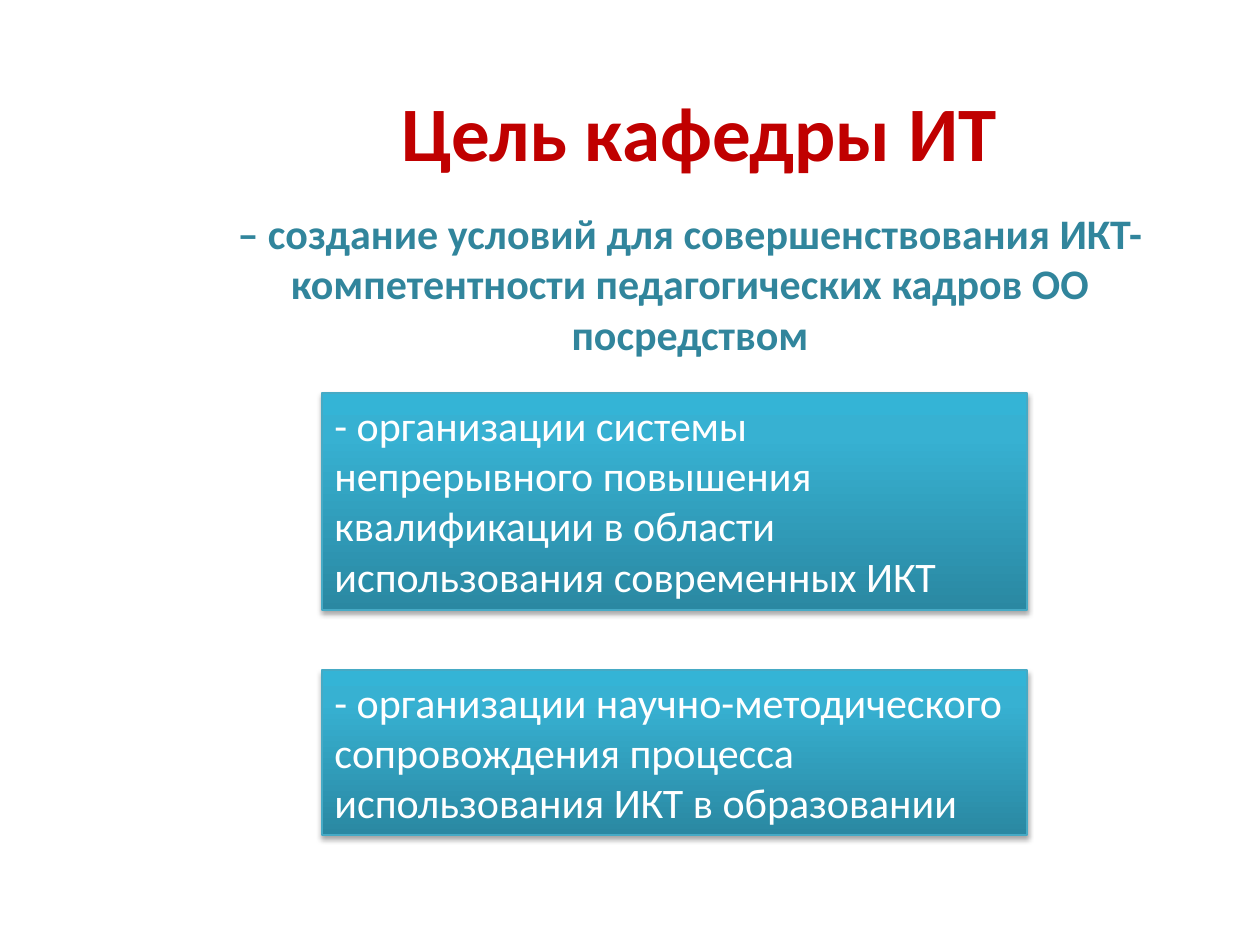
from copy import deepcopy

from lxml import etree
from pptx import Presentation
from pptx import util as u
from pptx.dml import color as colors
from pptx.enum import shapes, text
from pptx.oxml import ns

FONT = "Calibri"
CARD_GRADIENT = [(0, "2A88A2"), (0.8, "37B1D2"), (1, "34B4D6")]


def px(value):
    return u.Emu(round(value * 914400 / 126))


def rgb(value):
    return colors.RGBColor.from_string(value)


def write(frame, wording, size, color, bold, align):
    frame.word_wrap = True
    frame.text = wording
    paragraph = frame.paragraphs[0]
    paragraph.alignment = align
    font = paragraph.font
    font.name = FONT
    font.size = u.Pt(size)
    font.bold = bold
    font.color.rgb = rgb(color)


def fill_gradient(shape):
    shape.fill.gradient()
    shape.fill.gradient_angle = 90
    stop_list = shape._element.spPr.find(".//" + ns.qn("a:gsLst"))
    stop_list.append(deepcopy(stop_list[-1]))
    for stop, (position, color) in zip(shape.fill.gradient_stops, CARD_GRADIENT):
        stop.position = position
        stop.color.rgb = rgb(color)


def add_shadow(shape):
    shape.shadow.inherit = False
    effects = shape._element.spPr.find(ns.qn("a:effectLst"))
    shadow = etree.SubElement(
        effects, ns.qn("a:outerShdw"), blurRad="40000", dist="23000",
        dir="5400000", rotWithShape="0",
    )
    color = etree.SubElement(shadow, ns.qn("a:srgbClr"), val="000000")
    etree.SubElement(color, ns.qn("a:alpha"), val="35000")


def add_heading(slide, left, top, width, height, wording):
    box = slide.shapes.add_textbox(px(left), px(top), px(width), px(height))
    write(box.text_frame, wording, 44, "C00000", True, text.PP_ALIGN.LEFT)
    box.text_frame.auto_size = text.MSO_AUTO_SIZE.SHAPE_TO_FIT_TEXT


def place_title(slide, left, top, width, height, wording):
    title = slide.shapes.title
    title.left, title.top = px(left), px(top)
    title.width, title.height = px(width), px(height)
    frame = title.text_frame
    frame.auto_size = text.MSO_AUTO_SIZE.NONE
    frame.vertical_anchor = text.MSO_ANCHOR.MIDDLE
    write(frame, wording, 24, "31859C", True, text.PP_ALIGN.CENTER)


def add_card(slide, left, top, width, height, wording):
    card = slide.shapes.add_shape(
        shapes.MSO_SHAPE.RECTANGLE, px(left), px(top), px(width), px(height)
    )
    fill_gradient(card)
    card.line.color.rgb = rgb("46AAC5")
    card.line.width = u.Pt(0.75)
    add_shadow(card)
    frame = card.text_frame
    frame.vertical_anchor = text.MSO_ANCHOR.TOP
    write(frame, wording, 24, "FFFFFF", False, text.PP_ALIGN.LEFT)
    frame.auto_size = text.MSO_AUTO_SIZE.SHAPE_TO_FIT_TEXT


def main():
    presentation = Presentation()
    presentation.slide_width = px(1260)
    presentation.slide_height = px(945)
    slide = presentation.slides.add_slide(presentation.slide_layouts.get_by_name("Title Only"))
    place_title(
        slide, 189, 204, 1002, 158,
        "– создание условий для совершенствования ИКТ-компетентности "
        "педагогических кадров ОО посредством",
    )
    add_heading(slide, 389, 78, 645, 106, "Цель кафедры ИТ")
    cards = [
        (393, 217, "- организации системы непрерывного повышения квалификации "
                   "в области использования современных ИКТ"),
        (670, 165, "- организации научно-методического сопровождения процесса "
                   "использования ИКТ в образовании"),
    ]
    for top, height, wording in cards:
        add_card(slide, 322, top, 705, height, wording)
    presentation.save("out.pptx")


if __name__ == "__main__":
    main()
